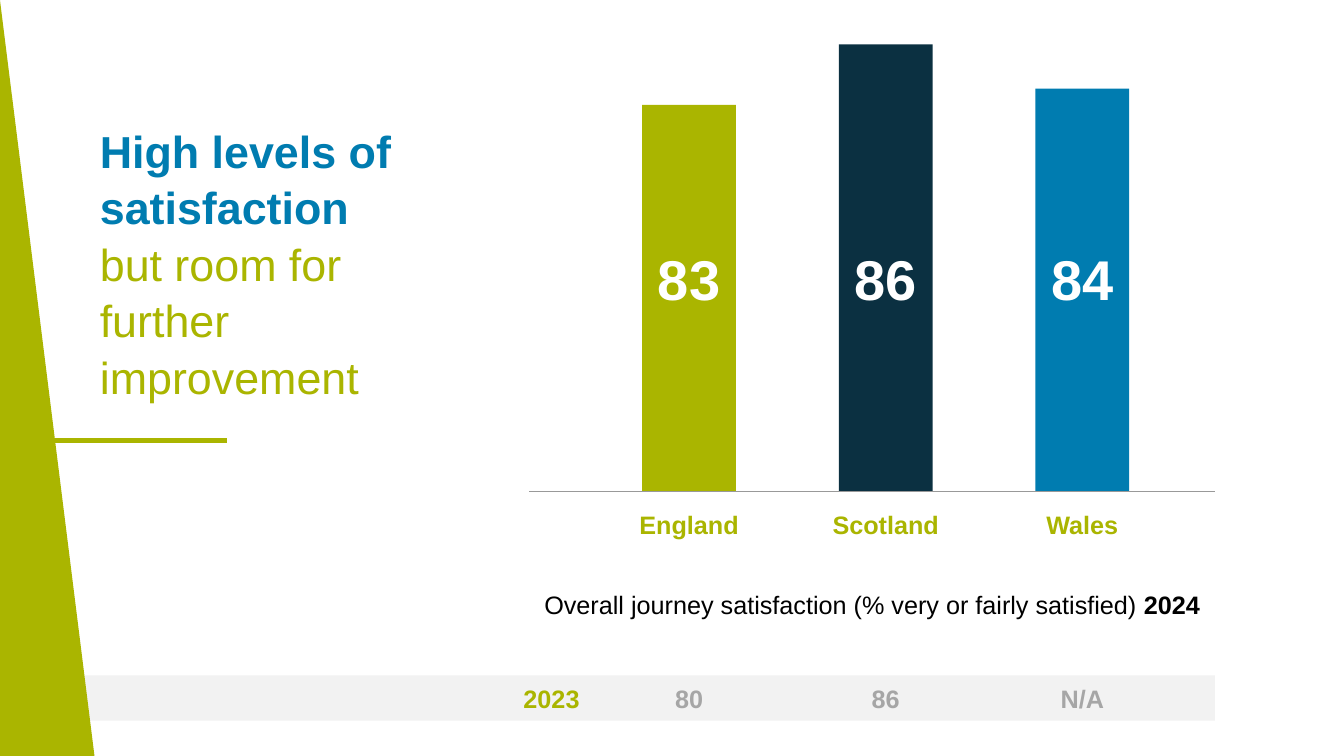
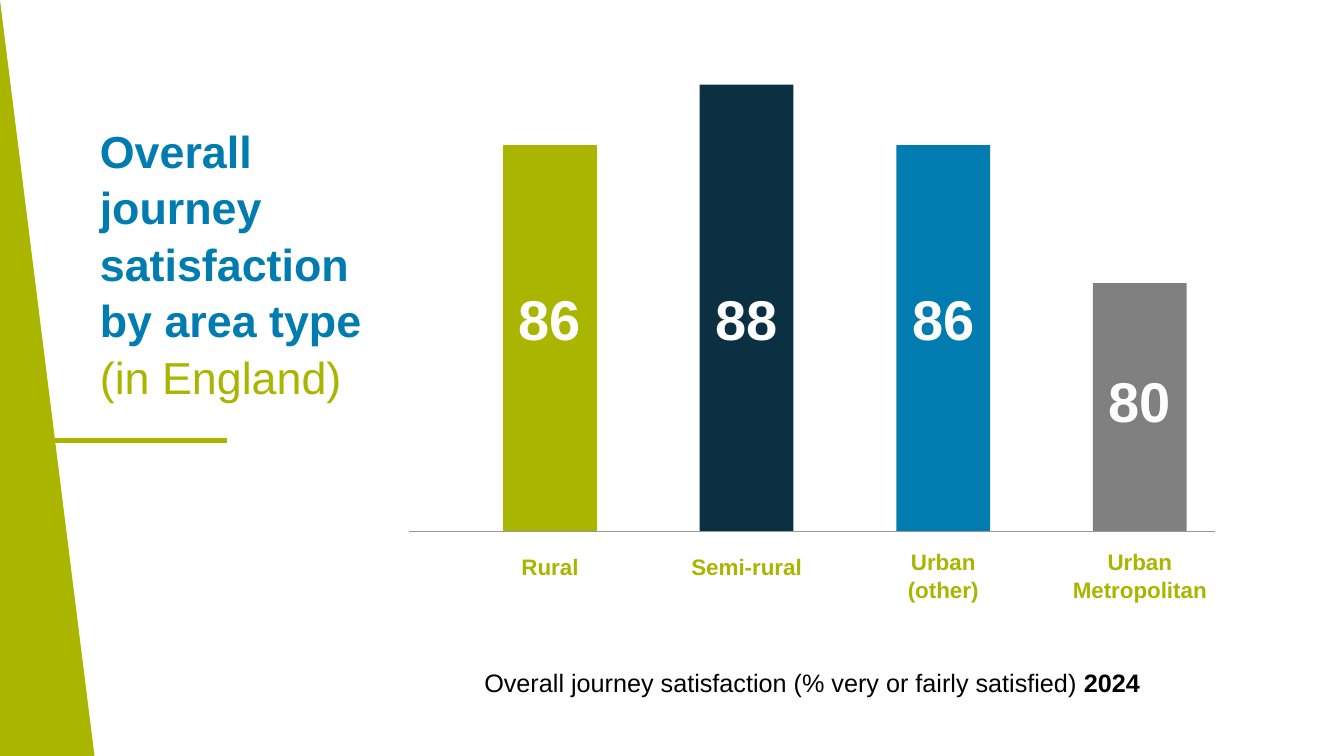
from dataclasses import dataclass
from lxml.etree import SubElement
from pptx import Presentation
from pptx.dml.color import RGBColor
from pptx.enum.shapes import MSO_CONNECTOR, MSO_SHAPE
from pptx.enum.text import MSO_ANCHOR, MSO_AUTO_SIZE, PP_ALIGN
from pptx.oxml.ns import qn
from pptx.util import Inches, Pt


@dataclass(frozen=True)
class Theme:
    """Colours, type sizes and spacing shared by all slides."""
    font: str = "Arial"
    lime: str = "AAB500"
    navy: str = "0B3041"
    blue: str = "007CB0"
    grey: str = "808080"
    axis: str = "999999"
    muted: str = "A6A6A6"
    strip: str = "F2F2F2"
    white: str = "FFFFFF"
    black: str = "000000"
    title_size: int = 32
    value_size: int = 40
    text_size: int = 18
    small_size: int = 16
    spacing: float = 1.05


@dataclass(frozen=True)
class Bar:
    """One column: its label, value, colour, height and value position."""
    label: str
    value: str
    color: str
    height: float
    value_lift: float = 2.46
    label_height: float = 0.37


THEME = Theme()
BAR_WIDTH, BAR_STEP, LABEL_WIDTH = 0.93, 1.95, 1.37
AXIS_RIGHT = 12.05


def rgb(color):
    """Turn a hex string into a colour."""
    return RGBColor.from_string(color)


def box(left, top, width, height):
    """Convert a rectangle in inches to lengths."""
    return [Inches(side) for side in (left, top, width, height)]


def write(frame, runs, size, align=PP_ALIGN.CENTER):
    """Fill a bottom-anchored frame with (text, colour, bold) runs."""
    frame.word_wrap = True
    frame.auto_size = MSO_AUTO_SIZE.NONE
    frame.vertical_anchor = MSO_ANCHOR.BOTTOM
    frame.margin_left = frame.margin_right = 0
    frame.margin_top = frame.margin_bottom = 0
    paragraph = frame.paragraphs[0]
    paragraph.alignment = align
    paragraph.line_spacing = THEME.spacing
    for text, color, bold in runs:
        run = paragraph.add_run()
        run.text = text
        run.font.name = THEME.font
        run.font.size = Pt(size)
        run.font.bold = bold
        run.font.color.rgb = rgb(color)


def add_text(slide, place, runs, size):
    """Add a centred text box."""
    write(slide.shapes.add_textbox(*box(*place)).text_frame, runs, size)


def paint(shape, color):
    """Give a shape a flat fill without outline or shadow."""
    shape.shadow.inherit = False
    shape.fill.solid()
    shape.fill.fore_color.rgb = rgb(color)
    shape.line.fill.background()


def add_rect(slide, place, color):
    """Add a flat rectangle."""
    paint(slide.shapes.add_shape(MSO_SHAPE.RECTANGLE, *box(*place)), color)


def add_rule(slide, left, right, y, color, weight):
    """Add a horizontal line."""
    rule = slide.shapes.add_connector(
        MSO_CONNECTOR.STRAIGHT, Inches(left), Inches(y), Inches(right), Inches(y))
    rule.line.color.rgb = rgb(color)
    rule.line.width = Pt(weight)
    SubElement(rule._element.spPr, qn("a:effectLst"))


def add_side_band(slide):
    """Add the slanted band along the left edge."""
    outline = slide.shapes.build_freeform(0.01, 0, scale=Inches(1))
    outline.add_line_segments([(0.49, 0), (0.93, 7.5), (0, 7.5)], close=True)
    paint(outline.convert_to_shape(), THEME.lime)


def add_title(slide, strong, light):
    """Write the two-tone title and the rule below it."""
    title = slide.shapes.title
    title.left, title.top, title.width, title.height = box(0.99, 1.34, 2.99, 2.66)
    write(title.text_frame,
          [(strong, THEME.blue, True), (light, THEME.lime, False)],
          THEME.title_size, PP_ALIGN.LEFT)
    add_rule(slide, 0.55, 2.25, 4.37, THEME.lime, 3)


def add_caption(slide, left, top, height):
    """Add the measure caption, centred under the axis."""
    add_text(slide, (left, top, AXIS_RIGHT - left, height),
             [("Overall journey satisfaction (% very or fairly satisfied) ",
               THEME.black, False), ("2024", THEME.black, True)],
             THEME.text_size)


def add_previous_year(slide, year, values, first_left):
    """Add the strip with the previous year's values."""
    add_rect(slide, (0, 6.7, AXIS_RIGHT, 0.45), THEME.strip)
    add_text(slide, (5.09, 6.71, 0.76, 0.37),
             [(year, THEME.lime, True)], THEME.text_size)
    for index, value in enumerate(values):
        add_text(slide, (first_left + index * BAR_STEP, 6.71, BAR_WIDTH, 0.37),
                 [(value, THEME.muted, True)], THEME.text_size)


def add_bars(slide, bars, first_left, axis_left, base, label_size):
    """Add the columns with values and labels, standing on the axis."""
    for index, bar in enumerate(bars):
        left = first_left + index * BAR_STEP
        add_rect(slide, (left, base - bar.height, BAR_WIDTH, bar.height), bar.color)
        add_text(slide, (left, base - bar.value_lift, BAR_WIDTH, 0.68),
                 [(bar.value, THEME.white, True)], THEME.value_size)
        label_left = left - (LABEL_WIDTH - BAR_WIDTH) / 2
        add_text(slide, (label_left, base + 0.11, LABEL_WIDTH, bar.label_height),
                 [(bar.label, THEME.lime, True)], label_size)
    add_rule(slide, axis_left, AXIS_RIGHT, base, THEME.axis, 0.5)


def add_nations_slide(slide):
    """Build the slide comparing nations."""
    bars = [Bar("England", "83", THEME.lime, 3.83),
            Bar("Scotland", "86", THEME.navy, 4.43),
            Bar("Wales", "84", THEME.blue, 3.99)]
    add_title(slide, "High levels of satisfaction ",
              "but room for further improvement")
    add_caption(slide, 5.25, 5.51, 0.64)
    add_previous_year(slide, "2023", ["80", "86", "N/A"], 6.37)
    add_side_band(slide)
    add_bars(slide, bars, 6.37, 5.25, 4.87, THEME.text_size)


def add_areas_slide(slide):
    """Build the slide comparing area types."""
    bars = [Bar("Rural", "86", THEME.lime, 3.83),
            Bar("Semi-rural", "88", THEME.navy, 4.43),
            Bar("Urban (other)", "86", THEME.blue, 3.83, label_height=0.6),
            Bar("Urban Metropolitan", "80", THEME.grey, 2.46, 1.65, 0.6)]
    add_title(slide, "Overall journey satisfaction by area type ",
              "(in England)")
    add_caption(slide, 4.06, 6.37, 0.55)
    add_side_band(slide)
    add_bars(slide, bars, 4.99, 4.06, 5.27, THEME.small_size)


def main():
    """Build and save the presentation."""
    deck = Presentation()
    deck.slide_width, deck.slide_height = Inches(13.33), Inches(7.5)
    title_only = deck.slide_layouts.get_by_name("Title Only")
    for build in (add_nations_slide, add_areas_slide):
        build(deck.slides.add_slide(title_only))
    deck.save("out.pptx")


if __name__ == "__main__":
    main()
